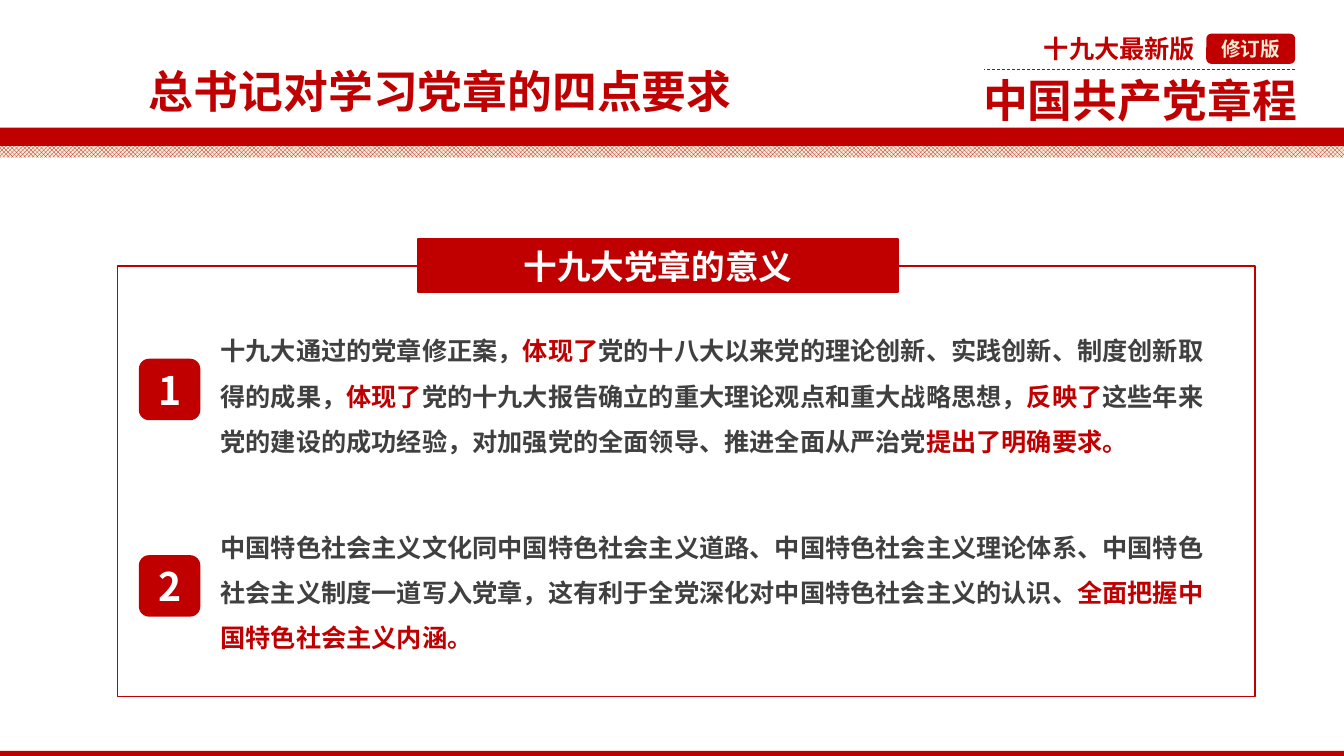
from lxml import etree
from pptx import Presentation
from pptx.dml.color import RGBColor
from pptx.enum.dml import MSO_LINE, MSO_PATTERN
from pptx.enum.shapes import MSO_CONNECTOR, MSO_SHAPE
from pptx.enum.text import MSO_ANCHOR, MSO_AUTO_SIZE, PP_ALIGN
from pptx.oxml.ns import qn
from pptx.util import Cm, Pt

RECTANGLE, ROUNDED = MSO_SHAPE.RECTANGLE, MSO_SHAPE.ROUNDED_RECTANGLE
LEFT, CENTER, RIGHT = PP_ALIGN.LEFT, PP_ALIGN.CENTER, PP_ALIGN.RIGHT
MIDDLE, TOP = MSO_ANCHOR.MIDDLE, MSO_ANCHOR.TOP

RED, GRAY, WHITE, CREAM, SAND = "C00000", "404040", "FFFFFF", "F6EDD6", "F7EDD8"
LATIN, CHINESE = "Arial", "Noto Sans CJK SC"
WIDTH, HEIGHT = 33.87, 19.05

TITLE = "总书记对学习党章的四点要求"
EDITION, REVISED, DOCUMENT = "十九大最新版", "修订版", "中国共产党章程"
HEADING = "十九大党章的意义"
POINTS = [
    [
        ("十九大通过的党章修正案，", GRAY),
        ("体现了", RED),
        ("党的十八大以来党的理论创新、实践创新、制度创新取得的成果，", GRAY),
        ("体现了", RED),
        ("党的十九大报告确立的重大理论观点和重大战略思想，", GRAY),
        ("反映了", RED),
        ("这些年来党的建设的成功经验，对加强党的全面领导、推进全面从严治党", GRAY),
        ("提出了明确要求。", RED),
    ],
    [
        ("中国特色社会主义文化同中国特色社会主义道路、中国特色社会主义理论体系、"
         "中国特色社会主义制度一道写入党章，这有利于全党深化对中国特色社会主义的认识、", GRAY),
        ("全面把握中国特色社会主义内涵。", RED),
    ],
]
POINT_TOP, POINT_PITCH, BADGE_OFFSET = 7.95, 4.95, 1.09


def color(value):
    return RGBColor.from_string(value)


def write(shape, runs, size, font_name, align=LEFT, anchor=MIDDLE, spacing=None):
    frame = shape.text_frame
    frame.word_wrap = True
    frame.auto_size = MSO_AUTO_SIZE.NONE
    frame.vertical_anchor = anchor
    paragraph = frame.paragraphs[0]
    paragraph.alignment = align
    if spacing:
        paragraph.line_spacing = spacing
    font = paragraph.font
    font.size = Pt(size)
    font.bold = True
    font.name = font_name
    properties = paragraph._p.pPr.find(qn("a:defRPr"))
    etree.SubElement(properties, qn("a:ea"), typeface=CHINESE)
    for text, text_color in runs:
        run = paragraph.add_run()
        run.text = text
        run.font.color.rgb = color(text_color)


def add_box(slide, kind, box, fill=None, line=None, line_width=1):
    shape = slide.shapes.add_shape(kind, *map(Cm, box))
    shape.shadow.inherit = False
    if fill:
        shape.fill.solid()
        shape.fill.fore_color.rgb = color(fill)
    else:
        shape.fill.background()
    if line:
        shape.line.color.rgb = color(line)
        shape.line.width = Pt(line_width)
    else:
        shape.line.fill.background()
    return shape


def add_text(slide, box, runs, size, font_name, align=LEFT, spacing=None):
    shape = slide.shapes.add_textbox(*map(Cm, box))
    write(shape, runs, size, font_name, align, TOP, spacing)


def add_header(slide):
    add_text(slide, (21.46, 1.7, 11.48, 1.63), [(DOCUMENT, RED)], 32, CHINESE, RIGHT)
    add_text(slide, (25.7, 0.71, 5.03, 1.02), [(EDITION, RED)], 18, CHINESE, CENTER)
    tag = add_box(slide, ROUNDED, (30.4, 0.85, 2.24, 0.76), RED)
    write(tag, [(REVISED, CREAM)], 14, CHINESE, CENTER)

    rule = slide.shapes.add_connector(
        MSO_CONNECTOR.STRAIGHT, Cm(32.64), Cm(1.75), Cm(24.81), Cm(1.75))
    rule.line.color.rgb = color(RED)
    rule.line.width = Pt(0.5)
    rule.line.dash_style = MSO_LINE.DASH
    etree.SubElement(rule._element.spPr, qn("a:effectLst"))

    trellis = add_box(slide, RECTANGLE, (0, 3.63, WIDTH, 0.34))
    trellis.fill.patterned()
    trellis.fill.pattern = MSO_PATTERN.TRELLIS
    trellis.fill.fore_color.rgb = color(RED)
    trellis.fill.back_color.rgb = color(SAND)

    for top, height in ((3.22, 0.46), (HEIGHT - 0.13, 0.13)):
        add_box(slide, RECTANGLE, (0, top, WIDTH, height), RED)


def add_points(slide):
    add_box(slide, RECTANGLE, (2.96, 6.7, 28.67, 10.86), line=RED)
    heading = add_box(slide, RECTANGLE, (10.53, 6.03, 12.1, 1.33), RED, RED, 1.5)
    write(heading, [(HEADING, WHITE)], 24, LATIN, CENTER)
    for index, runs in enumerate(POINTS):
        top = POINT_TOP + index * POINT_PITCH
        add_text(slide, (5.31, top, 25.4, 3.71), runs, 18, LATIN, spacing=1.5)
        badge = add_box(slide, ROUNDED, (3.5, top + BADGE_OFFSET, 1.55, 1.55), RED)
        write(badge, [(str(index + 1), WHITE)], 28, CHINESE, CENTER)


def main():
    presentation = Presentation()
    presentation.slide_width, presentation.slide_height = Cm(WIDTH), Cm(HEIGHT)
    slide = presentation.slides.add_slide(presentation.slide_layouts[5])
    title = slide.shapes.title
    title.left, title.top, title.width, title.height = map(Cm, (3.5, 1.09, 16.94, 2.13))
    write(title, [(TITLE, RED)], 32, LATIN, spacing=1.2)
    add_header(slide)
    add_points(slide)
    presentation.save("out.pptx")


if __name__ == "__main__":
    main()
